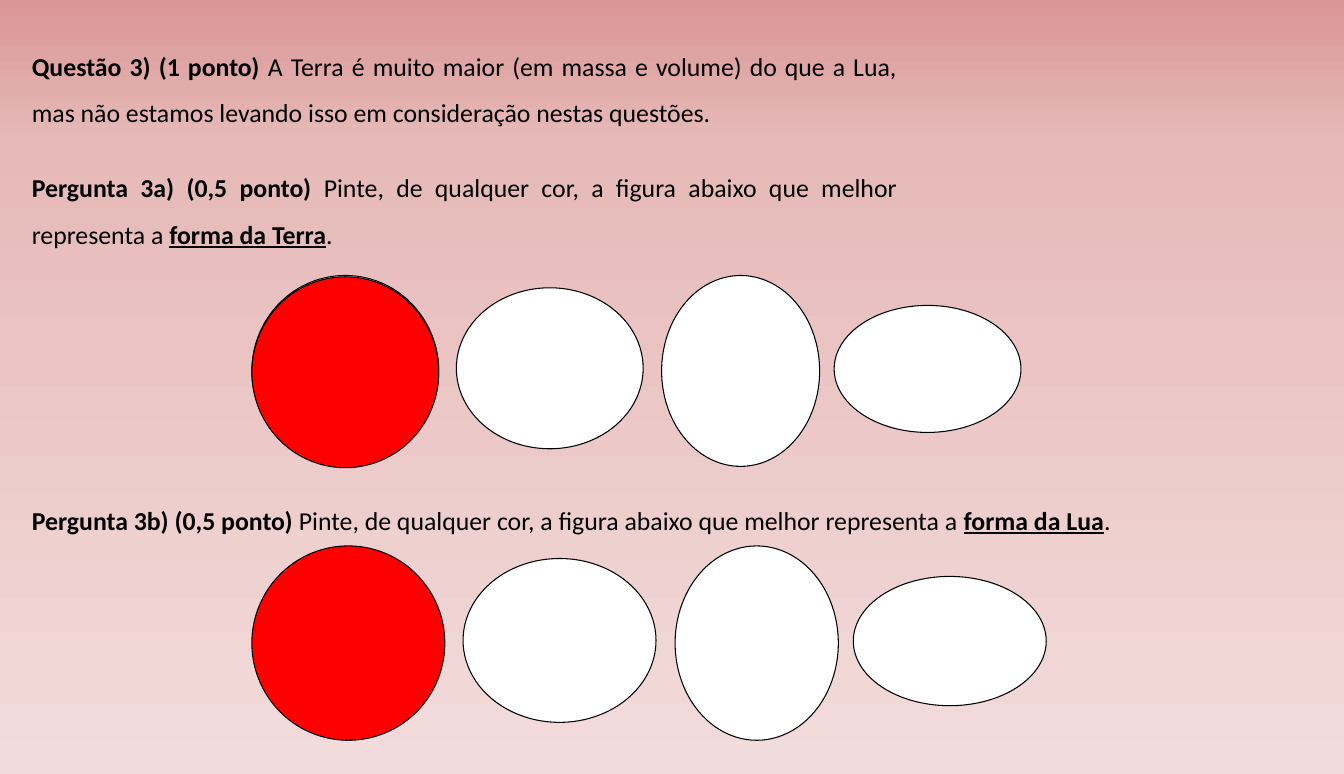
from copy import deepcopy
from dataclasses import dataclass

from pptx import Presentation
from pptx import util as u
from pptx.dml.color import RGBColor
from pptx.enum import shapes, text
from pptx.oxml import ns

BLACK, WHITE, RED = "000000", "FFFFFF", "FF0000"
BACKGROUND_STOPS = [(0, "D99694"), (0.18, "E6B9B8"), (1, "F2DCDB")]
TEXT_LEFT = 15.1
FIGURES_LEFT = 175.7


@dataclass
class Question:
    top: float
    width: float
    height: float
    label: str
    wording: str
    answer: str = ""


@dataclass
class Figure:
    """An ellipse placed relative to the start of its row."""
    left: float
    top: float
    width: float
    height: float


@dataclass
class FigureRow:
    top: float
    scale_x: float = 1
    scale_y: float = 1


QUESTIONS = [
    Question(20.9, 617.8, 69.1, "Questão 3) (1 ponto)",
             " A Terra é muito maior (em massa e volume) do que a Lua, "
             "mas não estamos levando isso em consideração nestas questões."),
    Question(105.8, 617.8, 69.1, "Pergunta 3a) (0,5 ponto) ",
             "Pinte, de qualquer cor, a figura abaixo que melhor representa a ",
             "forma da Terra"),
    Question(337.7, 771.1, 36.7, "Pergunta 3b) (0,5 ponto) ",
             "Pinte, de qualquer cor, a figura abaixo que melhor representa a ",
             "forma da Lua"),
]

CIRCLE = Figure(0, 0, 130.3, 133.2)
PAINTED_EARTH = Figure(0, 0.9, 130.3, 133.2)
OTHER_FIGURES = [
    Figure(142.6, 8.6, 130.3, 112.3),
    Figure(285.8, 0, 110.2, 133.2),
    Figure(406.1, 20.9, 130.3, 88.6),
]
EARTH_ROW = FigureRow(192.2)
MOON_ROW = FigureRow(380.9, 1.033, 1.018)


def color(value: str) -> RGBColor:
    return RGBColor.from_string(value)


def paint_background(slide) -> None:
    fill = slide.background.fill
    fill.gradient()
    fill.gradient_angle = 270  # counter-clockwise, so top to bottom
    stop_list = slide.element.find(".//" + ns.qn("a:gsLst"))
    stop_list.append(deepcopy(stop_list[0]))
    for stop, (position, value) in zip(fill.gradient_stops, BACKGROUND_STOPS):
        stop.position = position
        stop.color.rgb = color(value)


def add_run(paragraph, wording: str, *, bold: bool = False, underline: bool = False) -> None:
    run = paragraph.add_run()
    run.text = wording
    run.font.name = "Calibri"
    run.font.size = u.Pt(18)
    run.font.bold = bold
    run.font.underline = underline
    run.font.color.rgb = color(BLACK)


def add_question(slide, question: Question) -> None:
    box = slide.shapes.add_textbox(u.Pt(TEXT_LEFT), u.Pt(question.top),
                                   u.Pt(question.width), u.Pt(question.height))
    frame = box.text_frame
    frame.word_wrap = True
    frame.auto_size = text.MSO_AUTO_SIZE.SHAPE_TO_FIT_TEXT
    paragraph = frame.paragraphs[0]
    paragraph.alignment = text.PP_ALIGN.JUSTIFY
    paragraph.line_spacing = 1.5
    add_run(paragraph, question.label, bold=True)
    add_run(paragraph, question.wording)
    if question.answer:
        add_run(paragraph, question.answer, bold=True, underline=True)
        add_run(paragraph, ".")


def add_figure(slide, row: FigureRow, figure: Figure, fill: str = WHITE) -> None:
    shape = slide.shapes.add_shape(
        shapes.MSO_SHAPE.OVAL,
        u.Pt(FIGURES_LEFT + figure.left * row.scale_x),
        u.Pt(row.top + figure.top * row.scale_y),
        u.Pt(figure.width * row.scale_x),
        u.Pt(figure.height * row.scale_y))
    shape.shadow.inherit = False
    shape.fill.solid()
    shape.fill.fore_color.rgb = color(fill)
    shape.line.color.rgb = color(BLACK)
    shape.line.width = u.Pt(0.75)


def main() -> None:
    presentation = Presentation()
    presentation.slide_width = u.Pt(937.44)
    presentation.slide_height = u.Pt(540)
    slide = presentation.slides.add_slide(presentation.slide_layouts[6])
    paint_background(slide)
    for question in QUESTIONS:
        add_question(slide, question)
    for row in (EARTH_ROW, MOON_ROW):
        for figure in OTHER_FIGURES:
            add_figure(slide, row, figure)
    add_figure(slide, EARTH_ROW, CIRCLE)
    add_figure(slide, EARTH_ROW, PAINTED_EARTH, RED)
    add_figure(slide, MOON_ROW, CIRCLE, RED)
    presentation.save("out.pptx")


if __name__ == "__main__":
    main()
